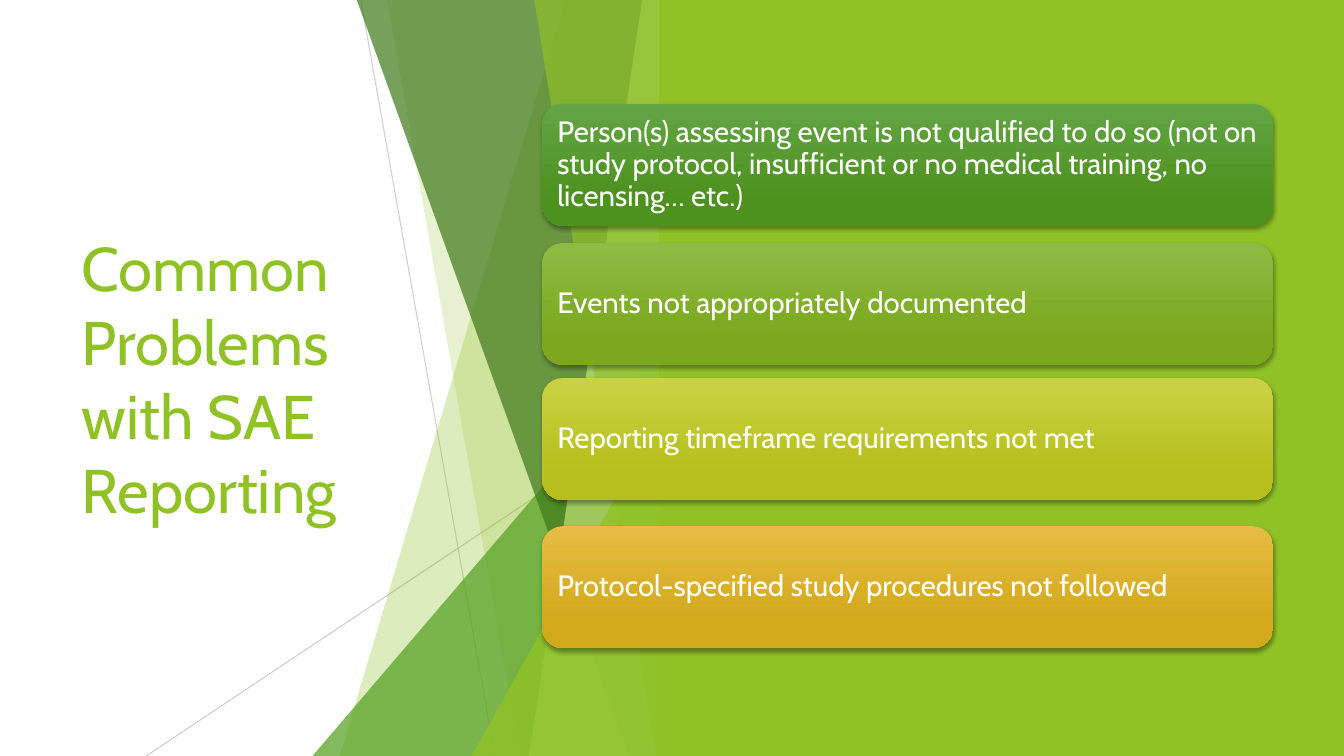
from lxml import etree
from pptx import Presentation
from pptx.dml.color import RGBColor
from pptx.enum.shapes import MSO_CONNECTOR, MSO_SHAPE
from pptx.enum.text import MSO_ANCHOR, PP_ALIGN
from pptx.oxml.ns import qn
from pptx.util import Inches, Pt

RECTANGLE = MSO_SHAPE.RECTANGLE
TRIANGLE = MSO_SHAPE.ISOSCELES_TRIANGLE
ROUNDED = MSO_SHAPE.ROUNDED_RECTANGLE
STRAIGHT = MSO_CONNECTOR.STRAIGHT
MIDDLE = MSO_ANCHOR.MIDDLE
LEFT = PP_ALIGN.LEFT

COLORS = {
    "lime": "90C226",
    "green": "54A021",
    "forest": "3F7819",
    "pale": "C0E474",
    "gray": "BFBFBF",
    "white": "FFFFFF",
    "shadow": "000000",
}
FONT = "Cabin"
TITLE_ONLY = 5
# All positions are columns and rows of a 100 by 100 grid
GRID = 100
SEAM = 50  # column where the slanted shards end


class Slide:
    """Holds the style and the current slide."""

    def __init__(self, deck):
        self.column = deck.slide_width / GRID
        self.row = deck.slide_height / GRID
        self.page = deck.slides.add_slide(deck.slide_layouts[TITLE_ONLY])
        self.shapes = self.page.shapes

    def place(self, *lengths):
        """Turn alternating columns and rows into slide lengths."""
        units = (self.column, self.row)
        return [round(length * units[i % 2]) for i, length in enumerate(lengths)]

    def set_alpha(self, element, percent):
        color = element.spPr.find(".//" + qn("a:srgbClr"))
        etree.SubElement(color, qn("a:alpha"), val=str(percent * 1000))

    def paint(self, shape, color, alpha=100):
        shape.shadow.inherit = False
        shape.line.fill.background()
        shape.fill.solid()
        shape.fill.fore_color.rgb = RGBColor.from_string(COLORS[color])
        if alpha < 100:
            self.set_alpha(shape._element, alpha)

    def set_text(self, shape, text, size, color, frame_format, para_format):
        frame = shape.text_frame
        frame.text = text
        for name, value in frame_format.items():
            setattr(frame, name, value)
        para = frame.paragraphs[0]
        for name, value in para_format.items():
            setattr(para, name, value)
        span = para.runs[0]
        for name, value in {"name": FONT, "size": Pt(size), "bold": False}.items():
            setattr(span.font, name, value)
        span.font.color.rgb = RGBColor.from_string(COLORS[color])

    def title(self, text, *area):
        box = self.shapes.title
        box.left, box.top, box.width, box.height = self.place(*area)
        self.set_text(box, text, 44, "lime",
                      {"word_wrap": True, "vertical_anchor": MIDDLE},
                      {"alignment": LEFT})

    def line(self, ends, alpha):
        line = self.shapes.add_connector(STRAIGHT, *self.place(*ends))
        line.line.width = Pt(0.75)
        line.line.color.rgb = RGBColor.from_string(COLORS["gray"])
        self.set_alpha(line._element, alpha)
        etree.SubElement(line._element.spPr, qn("a:effectLst"))

    def shard(self, top, bottom, color, alpha):
        """Draw a full-height shape with a slanted left edge."""
        corners = [(top, 0), (SEAM, 0), (SEAM, GRID), (bottom, GRID)]
        points = [self.place(*corner) for corner in corners]
        builder = self.shapes.build_freeform(*points[0], scale=1.0)
        builder.add_line_segments(points[1:], close=True)
        self.paint(builder.convert_to_shape(), color, alpha)

    def triangle(self, left, top, color, alpha):
        area = self.place(left, top, SEAM - left, GRID - top)
        shape = self.shapes.add_shape(TRIANGLE, *area)
        shape.adjustments[0] = 1
        self.paint(shape, color, alpha)

    def panel(self, left):
        area = self.place(left, 0, GRID - left, GRID)
        self.paint(self.shapes.add_shape(RECTANGLE, *area), "lime")

    def card(self, text, top, gradient):
        box = self.shapes.add_shape(ROUNDED, *self.place(40.35, top, 54.38, 16.13))
        box.line.fill.background()
        # Vertical gradient
        box.fill.gradient()
        box.fill.gradient_angle = 270
        for stop, position, color in zip(box.fill.gradient_stops, (0, 0.78), gradient):
            stop.position = position
            stop.color.rgb = RGBColor.from_string(color)
        # Soft shadow below the card
        box.shadow.inherit = False
        effects = box._element.spPr.find(qn("a:effectLst"))
        shadow = etree.SubElement(effects, qn("a:outerShdw"), blurRad=str(Pt(3)),
                                  dist=str(Pt(2)), dir="5400000", rotWithShape="0")
        color = etree.SubElement(shadow, qn("a:srgbClr"), val=COLORS["shadow"])
        etree.SubElement(color, qn("a:alpha"), val="35000")
        sides = ("left", "top", "right", "bottom")
        frame_format = {f"margin_{side}": Inches(0.09) for side in sides}
        frame_format.update(word_wrap=True, vertical_anchor=MIDDLE)
        self.set_text(box, text, 21, "white", frame_format,
                      {"alignment": LEFT, "line_spacing": 0.9})


def main():
    deck = Presentation()
    deck.slide_width, deck.slide_height = Inches(13.33), Inches(7.5)
    slide = Slide(deck)
    slide.title("Common Problems with SAE Reporting", 5.33, 20.13, 29.1, 59.73)

    # Slanted backdrop, from back to front
    slide.line((26.85, 0, 36.83, 100), 75)
    slide.line((49.95, 53.73, 10.88, 100), 80)
    slide.shard(42.08, 25.28, "lime", 30)
    slide.shard(28.8, 38.7, "lime", 20)
    slide.triangle(23.25, 44.4, "green", 72)
    slide.shard(26.55, 46.8, "forest", 70)
    slide.shard(47.78, 39.38, "pale", 70)
    slide.shard(39.75, 48.83, "lime", 65)
    slide.triangle(35.1, 52.4, "lime", 80)
    slide.panel(49.05)

    # Problem cards: text, top row, gradient
    cards = [
        ("Person(s) assessing event is not qualified to do so (not on study protocol, "
         "insufficient or no medical training, no licensing… etc.)",
         13.73, ("63A545", "4D921E")),
        ("Events not appropriately documented", 32.13, ("8EBB44", "7BA81D")),
        ("Reporting timeframe requirements not met", 50, ("CAD243", "B6BF1B")),
        ("Protocol-specified study procedures not followed", 69.6, ("E7BC43", "D2A91B")),
    ]
    for card in cards:
        slide.card(*card)

    deck.save("out.pptx")


if __name__ == "__main__":
    main()
